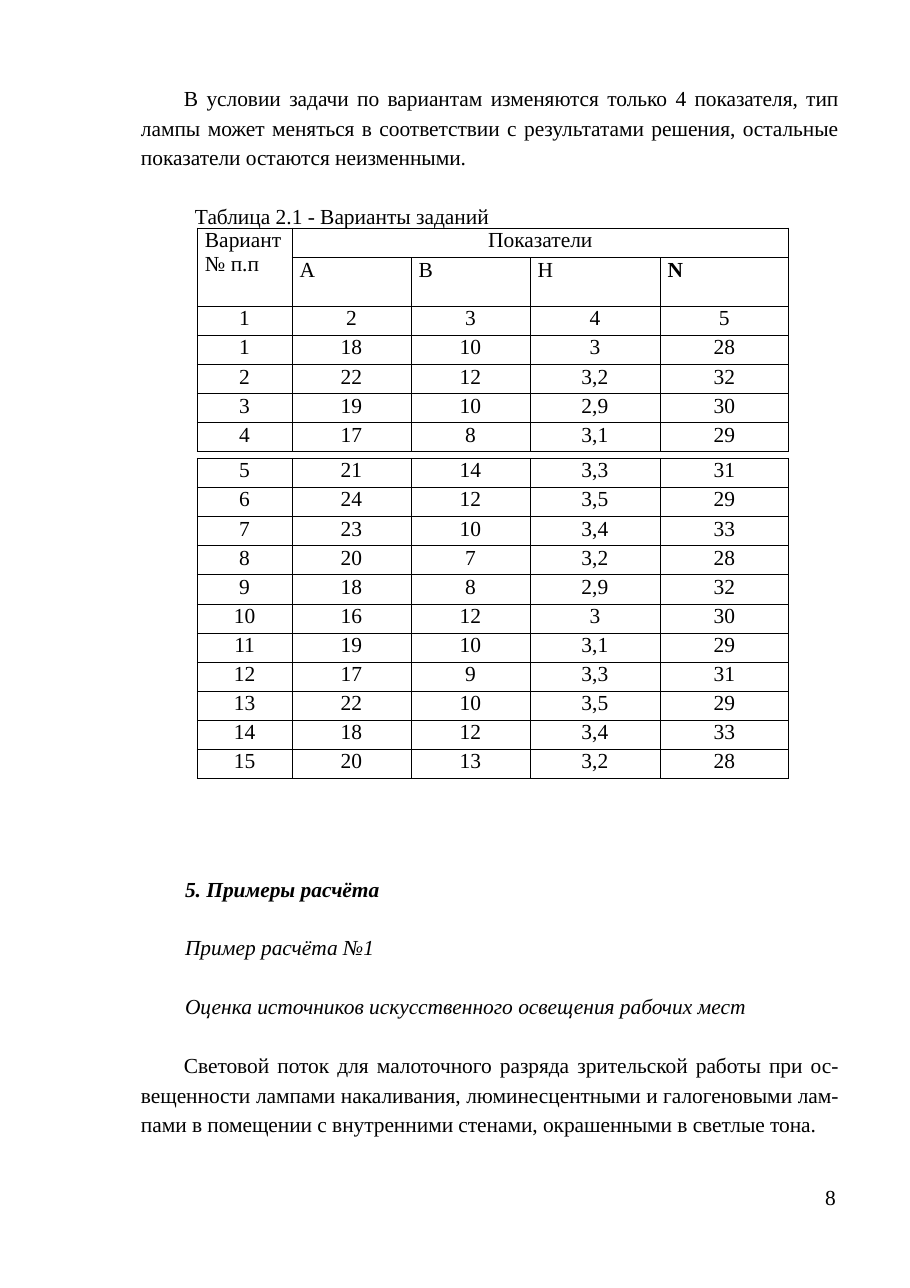
from dataclasses import dataclass

from lxml.etree import SubElement
from pptx import Presentation
from pptx.dml.color import RGBColor
from pptx.enum.text import PP_ALIGN
from pptx.oxml.ns import qn
from pptx.slide import Slide
from pptx.table import _Cell
from pptx.text.text import TextFrame
from pptx.util import Inches, Pt

COLORS = {"ink": "000000"}
FONT = "Times New Roman"
SIZE = 14
COLS = [0.86, 1.08, 1.08, 1.18, 1.17]
TABLE_LEFT = 1.79
ROW_H = 2.91 / 11
CELL_LINE = Pt(15.8)


@dataclass
class Para:
    text: str
    align: PP_ALIGN = PP_ALIGN.LEFT
    left: float = 0
    first: float = 0
    right: float = 0
    before: float = 0
    line: float = 1.0
    bold: bool = False
    italic: bool = False
    tracking: int = 0


@dataclass
class TextBlock:
    left: float
    top: float
    width: float
    height: float
    inset: float
    paras: list[Para]


def body(text: str, before: float) -> Para:
    return Para(text, PP_ALIGN.JUSTIFY, left=0.01, first=0.39, right=0.09,
                before=before, line=1.15, tracking=-5)


def heading(text: str, before: float, bold: bool = False) -> Para:
    return Para(text, left=0.41, before=before, bold=bold, italic=True, tracking=-3)


def label(text: str, bold: bool = False) -> Para:
    return Para(text, left=0.07, line=CELL_LINE, bold=bold)


def centered(text: str) -> Para:
    return Para(text, PP_ALIGN.CENTER, line=CELL_LINE)


def write(tf: TextFrame, paras: list[Para]) -> None:
    for i, para in enumerate(paras):
        p = tf.paragraphs[0] if i == 0 else tf.add_paragraph()
        p.alignment = para.align
        p.line_spacing = para.line
        p.space_before = Pt(para.before)
        pPr = p._p.get_or_add_pPr()
        pPr.set("marL", str(Inches(para.left)))
        pPr.set("marR", str(Inches(para.right)))
        pPr.set("indent", str(Inches(para.first)))
        r = p.add_run()
        r.text = para.text
        r.font.name = FONT
        r.font.size = Pt(SIZE)
        r.font.bold = para.bold
        r.font.italic = para.italic
        r.font.color.rgb = RGBColor.from_string(COLORS["ink"])
        if para.tracking:
            r._r.get_or_add_rPr().set("spc", str(para.tracking))


def add_text(s: Slide, block: TextBlock) -> None:
    sp = s.shapes.add_textbox(Inches(block.left), Inches(block.top),
                              Inches(block.width), Inches(block.height))
    tf = sp.text_frame
    tf.word_wrap = True
    tf.margin_left = tf.margin_right = tf.margin_bottom = 0
    tf.margin_top = Inches(block.inset)
    write(tf, block.paras)


def style_cell(cell: _Cell) -> None:
    cell.margin_left = cell.margin_right = cell.margin_top = cell.margin_bottom = 0
    tcPr = cell._tc.get_or_add_tcPr()
    for side in ("a:lnL", "a:lnR", "a:lnT", "a:lnB"):
        ln = SubElement(tcPr, qn(side), w=str(Pt(0.5)))
        fill = SubElement(ln, qn("a:solidFill"))
        SubElement(fill, qn("a:srgbClr"), val=COLORS["ink"])
    cell.fill.background()


def add_grid(s: Slide, top: float, heights: list[float],
             rows: list[list[list[Para]]]) -> None:
    """Draw a ruled table; an empty paragraph list belongs to a merged cell."""
    table = s.shapes.add_table(len(rows), len(COLS), Inches(TABLE_LEFT), Inches(top),
                               Inches(sum(COLS)), Inches(sum(heights))).table
    table.first_row = table.horz_banding = False
    for col, width in zip(table.columns, COLS):
        col.width = Inches(width)
    for r, (row, height) in enumerate(zip(rows, heights)):
        table.rows[r].height = Inches(height)
        for c, paras in enumerate(row):
            cell = table.cell(r, c)
            style_cell(cell)
            write(cell.text_frame, paras)
    if not rows[0][-1]:
        table.cell(0, 0).merge(table.cell(1, 0))
        table.cell(0, 1).merge(table.cell(0, len(COLS) - 1))


def number_rows(lines: list[str]) -> list[list[list[Para]]]:
    return [[[centered(value)] for value in line.split()] for line in lines]


HEADER = [
    [[label("Вариант"), label("№ п.п")], [centered("Показатели")], [], [], []],
    [[], [label("А")], [label("В")], [label("Н")], [label("N", bold=True)]],
]
FIRST_VARIANTS = ["1 2 3 4 5", "1 18 10 3 28", "2 22 12 3,2 32",
                  "3 19 10 2,9 30", "4 17 8 3,1 29"]
OTHER_VARIANTS = ["5 21 14 3,3 31", "6 24 12 3,5 29", "7 23 10 3,4 33",
                  "8 20 7 3,2 28", "9 18 8 2,9 32", "10 16 12 3 30",
                  "11 19 10 3,1 29", "12 17 9 3,3 31", "13 22 10 3,5 29",
                  "14 18 12 3,4 33", "15 20 13 3,2 28"]

BLOCKS = [
    # Introduction and table caption
    TextBlock(1.27, 0.73, 6.43, 1.32, 0.01, [
        body("В условии задачи по вариантам изменяются только 4 показателя, тип "
             "лампы может меняться в соответствии с результатами решения, "
             "остальные показатели остаются неизменными.", 1.1),
        Para("Таблица 2.1 - Варианты заданий", left=0.5, before=21.8, tracking=-3),
    ]),
    # Worked example
    TextBlock(1.27, 7.94, 6.43, 2.32, 0.01, [
        heading("5. Примеры расчёта", 1.1, bold=True),
        heading("Пример расчёта №1", 21.1),
        heading("Оценка источников искусственного освещения рабочих мест", 21.8),
        body("Световой поток для малоточного разряда зрительской работы при ос- "
             "вещенности лампами накаливания, люминесцентными и галогеновыми лам- "
             "пами в помещении с внутренними стенами, окрашенными в светлые тона.",
             19.4),
    ]),
    # Page number
    TextBlock(7.35, 10.75, 0.38, 0.24, 0, [Para("8", left=0.14, line=Pt(16.3))]),
]


def main() -> None:
    prs = Presentation()
    prs.slide_width, prs.slide_height = Inches(8.26), Inches(11.69)
    s = prs.slides.add_slide(prs.slide_layouts[6])

    for block in BLOCKS:
        add_text(s, block)

    # Variant tables
    add_grid(s, 2.07, [0.27, 0.44] + [ROW_H] * len(FIRST_VARIANTS),
             HEADER + number_rows(FIRST_VARIANTS))
    add_grid(s, 4.16, [ROW_H] * len(OTHER_VARIANTS), number_rows(OTHER_VARIANTS))

    prs.save("out.pptx")


if __name__ == "__main__":
    main()
